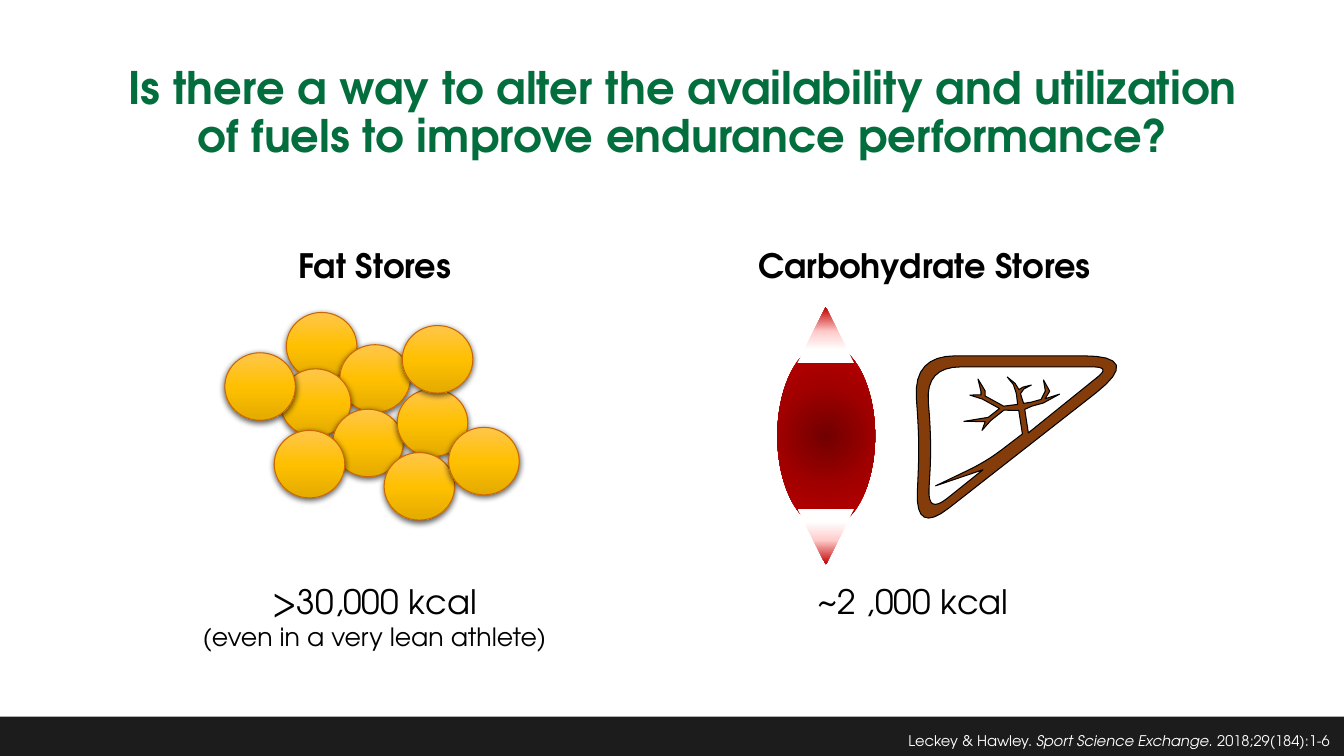
from dataclasses import dataclass

from lxml.etree import SubElement
from pptx import Presentation
from pptx.dml.color import RGBColor
from pptx.enum.shapes import MSO_SHAPE
from pptx.enum.text import MSO_AUTO_SIZE, PP_ALIGN
from pptx.oxml.ns import qn
from pptx.util import Inches, Pt


@dataclass(frozen=True)
class Theme:
    font: str = "TeX Gyre Adventor"
    green: str = "036E3D"
    black: str = "000000"
    white: str = "FFFFFF"
    bar: str = "1C1C1C"
    rim: str = "CC6600"
    liver: str = "843C0B"
    fat: tuple = ((0, "FFC64B"), (50, "FFC000"), (100, "E3AB00"))
    belly: tuple = ((0, "720000"), (50, "A20000"), (100, "C00000"))
    tendon: tuple = ((23, "FFFFFF"), (56, "FFCCCC"), (100, "C00000"))
    title: float = 32
    head: float = 24
    note: float = 18
    cite: float = 10.5


theme = Theme()


def shade(shape, stops, angle=None):
    shape.shadow.inherit = False
    shape.line.fill.background()
    shape.fill.gradient()
    grad = shape._element.spPr.find(qn("a:gradFill"))
    for child in list(grad):
        grad.remove(child)
    grad.set("rotWithShape", "1")
    items = SubElement(grad, qn("a:gsLst"))
    for place, color in stops:
        stop = SubElement(items, qn("a:gs"), pos=str(place * 1000))
        SubElement(stop, qn("a:srgbClr"), val=color)
    if angle is None:
        way = SubElement(grad, qn("a:path"), path="circle")
        SubElement(way, qn("a:fillToRect"), l="50000", t="50000", r="50000", b="50000")
    else:
        SubElement(grad, qn("a:lin"), ang=str(angle * 60000), scaled="0")


def write(box, lines, color, bold=False, align=PP_ALIGN.LEFT, wrap=False):
    frame = slide.shapes.add_textbox(*map(Inches, box)).text_frame
    frame.word_wrap = wrap
    frame.auto_size = MSO_AUTO_SIZE.NONE if wrap else MSO_AUTO_SIZE.SHAPE_TO_FIT_TEXT
    frame.text = "\n".join(text for text, size in lines)
    for para, (text, size) in zip(frame.paragraphs, lines):
        para.alignment = align
        font = para.runs[0].font
        font.name, font.size, font.bold = theme.font, Pt(size), bold
        font.color.rgb = RGBColor.from_string(color)
    return frame


deck = Presentation()
deck.slide_width, deck.slide_height = Inches(13.33), Inches(7.5)
slide = deck.slides.add_slide(deck.slide_layouts[6])

bar = slide.shapes.add_shape(
    MSO_SHAPE.RECTANGLE, 0, Inches(7.11), Inches(13.33), Inches(0.39))
bar.shadow.inherit = False
bar.fill.solid()
bar.fill.fore_color.rgb = RGBColor.from_string(theme.bar)
bar.line.fill.background()

title = write(
    (1.03, 0.6, 11.49, 0.69),
    [("Is there a way to alter the availability and utilization"
      " of fuels to improve endurance performance?", theme.title)],
    theme.green, True, PP_ALIGN.CENTER, True)
title.paragraphs[0].line_spacing = 0.9

muscle = slide.shapes.add_group_shape()
belly = muscle.shapes.add_shape(
    MSO_SHAPE.OVAL, Inches(7.71), Inches(3.41), Inches(0.97), Inches(1.83))
shade(belly, theme.belly)
for top, turn in [(5.05, 180), (3.05, 0)]:
    tendon = muscle.shapes.add_shape(
        MSO_SHAPE.ISOSCELES_TRIANGLE, Inches(7.91), Inches(top), Inches(0.56), Inches(0.55))
    tendon.rotation = turn
    shade(tendon, theme.tendon, 270)

cells = slide.shapes.add_group_shape()
for left, top in [(2.84, 3.1), (3.37, 3.42), (2.78, 3.66), (3.3, 4.06), (3.94, 3.86),
                  (2.72, 4.27), (3.81, 4.49), (3.99, 3.23), (2.23, 3.5), (4.45, 4.24)]:
    cell = cells.shapes.add_shape(
        MSO_SHAPE.OVAL, Inches(left), Inches(top), Inches(0.7), Inches(0.67))
    shade(cell, theme.fat, 90)
    cell.line.color.rgb = RGBColor.from_string(theme.rim)
    cell.line.width = Pt(0.75)
    glow = SubElement(
        cell._element.spPr.find(qn("a:effectLst")), qn("a:outerShdw"),
        blurRad=str(Pt(4.5)), dist=str(Pt(1.5)), dir="5400000", rotWithShape="0")
    tint = SubElement(glow, qn("a:srgbClr"), val=theme.black)
    SubElement(tint, qn("a:alpha"), val="63000")

walls = {
    "outer": {"tip": (11.34 + 3.53j, 0.6), "shoulder": (9.06 + 3.53j, 0.42),
              "waist": (9.12 + 4.4j, 0.3), "foot": (9.08 + 5.3j, 0.42)},
    "inner": {"tip": (11.02 + 3.64j, 0.18), "bend": (9.78 + 4.58j, 0.2),
              "spur": (9.28 + 4.82j, 0), "notch": (9.75 + 4.66j, 0),
              "foot": (9.2 + 5.1j, 0.25), "waist": (9.24 + 4.4j, 0.3),
              "shoulder": (9.18 + 3.64j, 0.35)},
}
veins = {
    "root": (None, 10.19 + 4.4j, 0.03), "base": ("root", 10.17 + 4.3j, 0.03),
    "fork": ("base", 10.13 + 4.04j, 0.03),
    "elbow": ("fork", 10.23 + 4.01j, 0.02), "knee": ("elbow", 10.34 + 3.98j, 0.02),
    "east": ("knee", 10.51 + 3.91j, 0), "curl": ("knee", 10.39 + 3.88j, 0.02),
    "hook": ("curl", 10.35 + 3.77j, 0),
    "stem": ("fork", 10.1 + 3.9j, 0.02), "twig": ("stem", 10.15 + 3.85j, 0.01),
    "leaf": ("twig", 10.23 + 3.82j, 0), "sprig": ("stem", 10.06 + 3.81j, 0.01),
    "bud": ("sprig", 9.99 + 3.74j, 0),
    "arm": ("fork", 9.95 + 4.05j, 0.02), "wrist": ("arm", 9.75 + 3.94j, 0.02),
    "thumb": ("wrist", 9.75 + 3.88j, 0.02), "north": ("thumb", 9.7 + 3.76j, 0),
    "west": ("wrist", 9.62 + 3.92j, 0), "heel": ("arm", 9.81 + 4.16j, 0.02),
    "toe": ("heel", 9.56 + 4.18j, 0), "south": ("heel", 9.74 + 4.27j, 0),
}

tour = ["root"]
for name, (parent, spot, half) in list(veins.items())[1:]:
    while tour[-1] != parent:
        tour.append(veins[tour[-1]][0])
    tour.append(name)
while tour[-1] != "root":
    tour.append(veins[tour[-1]][0])

trunk = []
for last, name, after in zip(tour, tour[1:], tour[2:]):
    spot, half = veins[name][1:]
    come, leave = spot - veins[last][1], veins[after][1] - spot
    come, leave = 1j * come / abs(come), 1j * leave / abs(leave)
    dot = (come * leave.conjugate()).real
    trunk.append(spot + half * (come + leave) / max(1 + dot, 0.4))

rims = []
for wall, parts in walls.items():
    rim, bends = [], list(parts.items())
    for spot, (name, (corner, cut)) in enumerate(bends):
        back = bends[spot - 1][1][0] - corner
        ahead = bends[(spot + 1) % len(bends)][1][0] - corner
        start, end = cut * back / abs(back), cut * ahead / abs(ahead)
        for step in range(9) if cut else [0]:
            t = step / 8
            rim.append(corner + (1 - t) ** 2 * start + t ** 2 * end)
        if (wall, name) == ("inner", "tip"):
            rim += trunk
    rims.append([(Inches(dot.real), Inches(dot.imag)) for dot in rim])

outer, inner = rims
draft = slide.shapes.build_freeform(*outer[0])
draft.add_line_segments(outer[1:])
draft.move_to(*inner[0])
draft.add_line_segments(inner[1:])
liver = draft.convert_to_shape()
liver.shadow.inherit = False
liver.fill.solid()
liver.fill.fore_color.rgb = RGBColor.from_string(theme.liver)
liver.line.color.rgb = RGBColor.from_string(theme.black)
liver.line.width = Pt(0.75)

write((2.86, 2.38, 1.76, 0.5), [("Fat Stores", theme.head)], theme.black, True)
write((7.42, 2.38, 3.68, 0.5), [("Carbohydrate Stores", theme.head)], theme.black, True)
write((1.88, 5.71, 3.67, 0.81),
      [(">30,000 kcal", theme.head), ("(even in a very lean athlete)", theme.note)],
      theme.black, align=PP_ALIGN.CENTER)
write((8.01, 5.71, 2.11, 0.5), [("~2 ,000 kcal", theme.head)], theme.black)

cite = write((7.73, 7.21, 5.56, 0.29), [("Leckey & Hawley. ", theme.cite)],
             theme.white, align=PP_ALIGN.RIGHT, wrap=True).paragraphs[0]
for text, slant in [("Sport Science Exchange. ", True), ("2018;29(184):1-6", False)]:
    run = cite.add_run()
    run.text = text
    run.font.name, run.font.size, run.font.italic = theme.font, Pt(theme.cite), slant
    run.font.color.rgb = RGBColor.from_string(theme.white)

deck.save("out.pptx")
